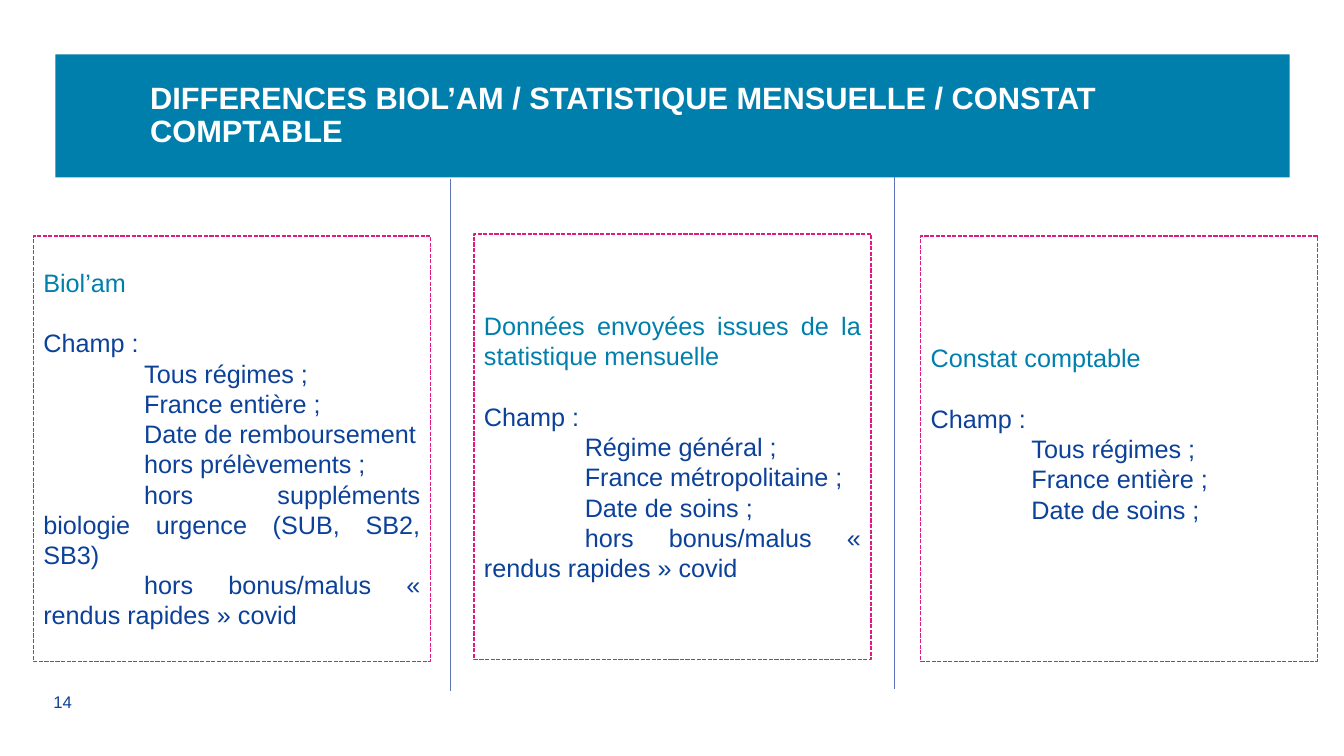
"""Build the slide comparing the scope of three data sources."""
from lxml import etree
from pptx import Presentation
from pptx import util as u
from pptx.dml.color import RGBColor
from pptx.enum import dml, shapes, text
from pptx.oxml.ns import qn

theme = {
    "font": "Arial",
    "teal": RGBColor.from_string("007FAD"),
    "navy": RGBColor.from_string("0C419A"),
    "pink": RGBColor.from_string("E11A81"),
    "rule": RGBColor.from_string("5E74B8"),
    "white": RGBColor.from_string("FFFFFF"),
    "head": u.Pt(22),
    "body": u.Pt(18),
    "page": u.Pt(12),
}


def place(box, left, top, width, height):
    spot = {"left": left, "top": top, "width": width, "height": height}
    for key, val in spot.items():
        setattr(box, key, u.Inches(val))


def write(para, words, size, color, bold=False):
    run = para.add_run()
    run.text = words
    look = {"name": theme["font"], "size": theme[size], "bold": bold}
    for key, val in look.items():
        setattr(run.font, key, val)
    run.font.color.rgb = theme[color]


deck = Presentation()
deck.slide_width, deck.slide_height = u.Inches(13.33), u.Inches(7.5)
slide = deck.slides.add_slide(deck.slide_layouts.get_by_name("Comparison"))
title, *bodies = slide.placeholders
spare = bodies.pop()
spare.element.getparent().remove(spare.element)

place(title, 0.55, 0.54, 12.24, 1.22)
title.fill.solid()
title.fill.fore_color.rgb = theme["teal"]
frame = title.text_frame
form = {
    "margin_left": u.Inches(0.94),
    "margin_right": u.Inches(0.08),
    "margin_top": u.Inches(0.08),
    "margin_bottom": u.Inches(0.08),
    "vertical_anchor": text.MSO_ANCHOR.MIDDLE,
    "auto_size": text.MSO_AUTO_SIZE.NONE,
    "word_wrap": True,
}
for key, val in form.items():
    setattr(frame, key, val)
para = frame.paragraphs[0]
para.alignment = text.PP_ALIGN.LEFT
para.line_spacing = 0.9
write(para, "DIFFERENCES BIOL’AM / STATISTIQUE MENSUELLE / CONSTAT COMPTABLE",
      "head", "white", True)

bonus = "hors bonus/malus « rendus rapides » covid"
columns = [
    (0.33, 2.34, 0.05, "Biol’am",
     ["Tous régimes ;", "France entière ;", "Date de remboursement",
      "hors prélèvements ;",
      "hors suppléments biologie urgence (SUB, SB2, SB3)", bonus]),
    (4.7, 2.32, 0.05, "Données envoyées issues de la statistique mensuelle",
     ["Régime général ;", "France métropolitaine ;", "Date de soins ;", bonus]),
    (9.13, 2.34, 0.35, "Constat comptable",
     ["Tous régimes ;", "France entière ;", "Date de soins ;"]),
]
for body, (left, top, foot, name, scope) in zip(bodies, columns):
    place(body, left, top, 3.94, 4.22)
    body.line.color.rgb = theme["pink"]
    body.line.width = u.Pt(1)
    body.line.dash_style = dml.MSO_LINE.SQUARE_DOT
    frame = body.text_frame
    form = {
        "margin_bottom": u.Inches(foot),
        "vertical_anchor": text.MSO_ANCHOR.MIDDLE,
        "auto_size": text.MSO_AUTO_SIZE.NONE,
        "word_wrap": True,
    }
    for key, val in form.items():
        setattr(frame, key, val)
    for row, words in enumerate([name, "Champ :", *scope]):
        para = frame.add_paragraph() if row else frame.paragraphs[0]
        props = para._p.get_or_add_pPr()
        props.set("marL", "0")
        props.set("indent", str(u.Inches(1 if row > 1 else 0)))
        etree.SubElement(props, qn("a:buNone"))
        para.alignment = text.PP_ALIGN.JUSTIFY
        para.space_before = u.Pt(21.6 if row == 1 else 0)
        write(para, words, "body", "navy" if row else "teal")

for left, top in [(4.47, 1.78), (8.87, 1.76)]:
    rule = slide.shapes.add_connector(
        shapes.MSO_CONNECTOR.STRAIGHT, u.Inches(left), u.Inches(top),
        u.Inches(left), u.Inches(top + 5.08))
    rule.line.color.rgb = theme["rule"]
    rule.line.width = u.Pt(0.5)
    etree.SubElement(rule._element.spPr, qn("a:effectLst"))

page = slide.shapes.add_textbox(*map(u.Inches, (0.43, 6.81, 0.79, 0.31)))
page.text_frame.word_wrap = True
page.text_frame.vertical_anchor = text.MSO_ANCHOR.MIDDLE
write(page.text_frame.paragraphs[0], "14", "page", "navy")

deck.save("out.pptx")
